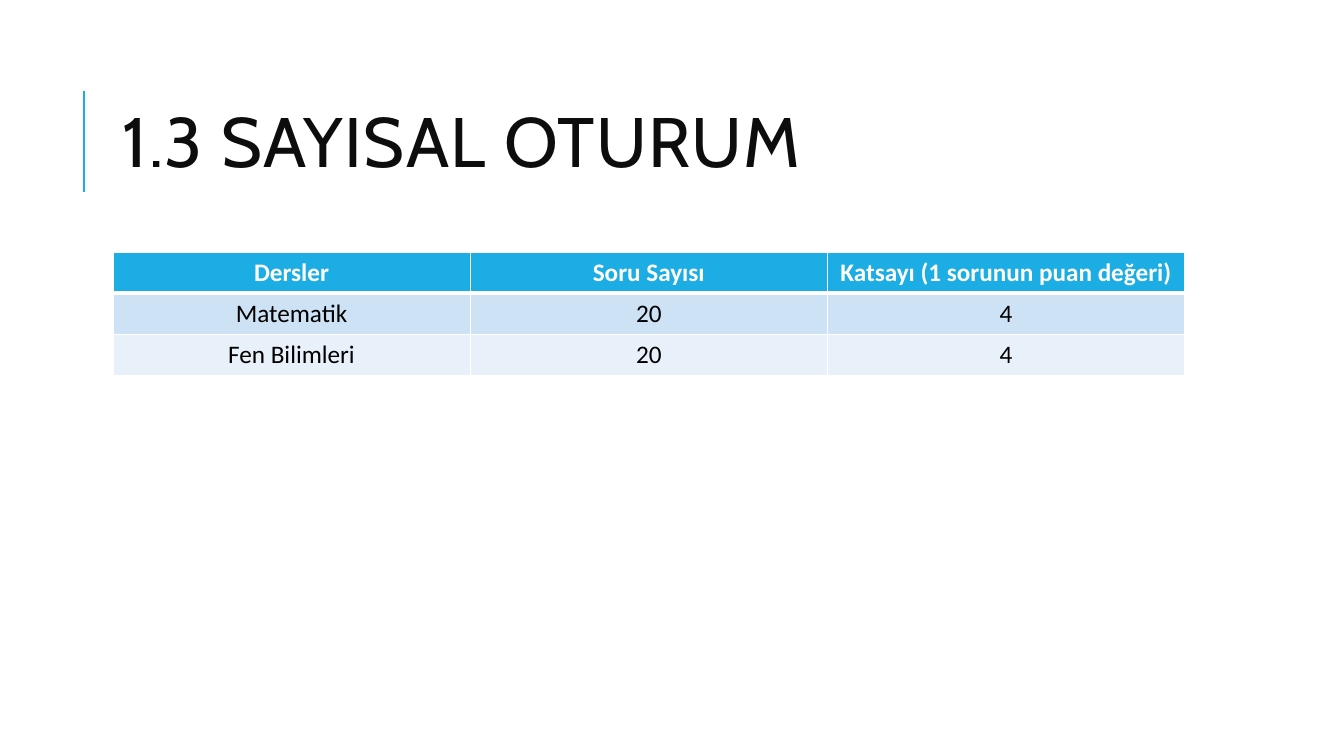
from lxml.etree import SubElement
from pptx import Presentation
from pptx.dml.color import RGBColor
from pptx.enum.shapes import MSO_CONNECTOR
from pptx.enum.text import MSO_ANCHOR, PP_ALIGN
from pptx.oxml.ns import qn
from pptx.util import Inches, Pt

COLORS = {
    "accent": "1CADE4",
    "title": "0D0D0D",
    "body": "000000",
    "white": "FFFFFF",
    "band_dark": "CDE3F5",
    "band_light": "E8F1FA",
}
ROWS = [
    ("Dersler", "Soru Sayısı", "Katsayı (1 sorunun puan değeri)"),
    ("Matematik", "20", "4"),
    ("Fen Bilimleri", "20", "4"),
]


def rgb(name):
    return RGBColor.from_string(COLORS[name])


class SlideBuilder:
    title_font = "Cabin"
    body_font = "Calibri"

    def __init__(self, prs):
        self.s = prs.slides.add_slide(prs.slide_layouts[6])

    def run(self, p, text, font, size, color, bold=False):
        r = p.add_run()
        r.text = text
        r.font.name = font
        r.font.size = Pt(size)
        r.font.bold = bold
        r.font.color.rgb = rgb(color)
        return r

    def line(self, x1, y1, x2, y2, color, width):
        c = self.s.shapes.add_connector(
            MSO_CONNECTOR.STRAIGHT, Inches(x1), Inches(y1), Inches(x2), Inches(y2))
        c.line.color.rgb = rgb(color)
        c.line.width = Pt(width)
        SubElement(c._element.spPr, qn("a:effectLst"))

    def title(self, text, x, y, w, h):
        sp = self.s.shapes.add_textbox(Inches(x), Inches(y), Inches(w), Inches(h))
        tf = sp.text_frame
        tf.word_wrap = True
        tf.vertical_anchor = MSO_ANCHOR.MIDDLE
        p = tf.paragraphs[0]
        p.line_spacing = 0.8
        r = self.run(p, text, self.title_font, 50, "title")
        r._r.get_or_add_rPr().set("spc", "100")

    def borders(self, cell, widths):
        """Draw white borders; widths maps L, R, T, B to points."""
        tcPr = cell._tc.get_or_add_tcPr()
        for side, width in widths.items():
            ln = SubElement(tcPr, qn(f"a:ln{side}"), w=str(Pt(width)))
            fill = SubElement(ln, qn("a:solidFill"))
            SubElement(fill, qn("a:srgbClr"), val=COLORS["white"])

    def table(self, rows, x, y, w, row_h):
        """Add a table with equal columns, a bold header and banded rows."""
        frame = self.s.shapes.add_table(
            len(rows), len(rows[0]), Inches(x), Inches(y),
            Inches(w), Inches(row_h * len(rows)))
        fills = ["accent", "band_dark", "band_light"]
        for i, row in enumerate(rows):
            header = i == 0
            widths = {"L": 1, "R": 1, "T": 3 if i == 1 else 1, "B": 3 if header else 1}
            for j, text in enumerate(row):
                cell = frame.table.cell(i, j)
                self.borders(cell, widths)
                cell.fill.solid()
                cell.fill.fore_color.rgb = rgb(fills[i])
                p = cell.text_frame.paragraphs[0]
                p.alignment = PP_ALIGN.CENTER
                self.run(p, text, self.body_font, 18,
                         "white" if header else "body", header)


def main():
    prs = Presentation()
    prs.slide_width, prs.slide_height = Inches(13.33), Inches(7.5)
    slide = SlideBuilder(prs)
    slide.line(0.83, 1.9, 0.83, 0.9, "accent", 1.5)
    slide.title("1.3 SAYISAL OTURUM", 1.12, 0.64, 10.63, 1.64)
    slide.table(ROWS, 1.12, 2.5, 10.63, 0.41)
    prs.save("out.pptx")


if __name__ == "__main__":
    main()
